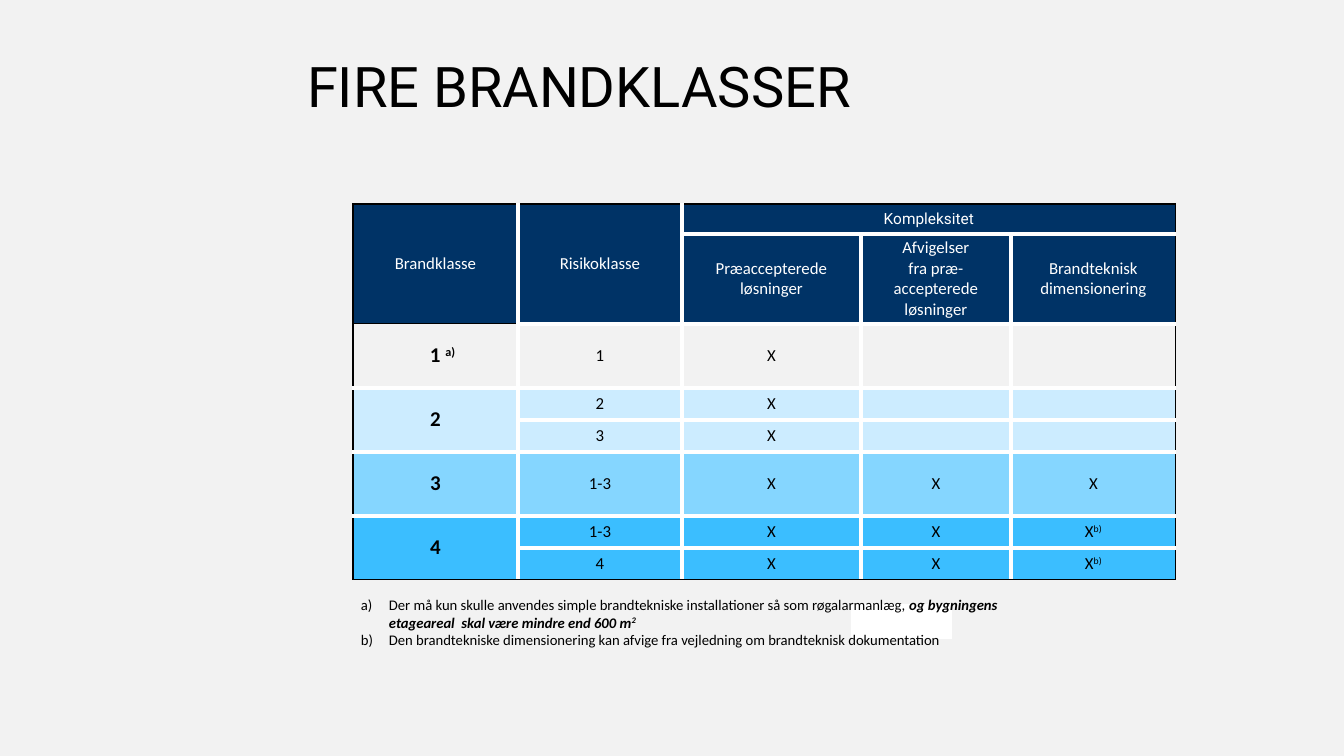
from lxml import etree
from pptx import Presentation
from pptx import util as u
from pptx.dml.color import RGBColor
from pptx.enum import shapes, text
from pptx.oxml.ns import qn

SCALE = 914400 / 100.8
WHITE, BLACK, NAVY, GREY = "FFFFFF", "000000", "003366", "F2F2F2"
COLS = [165, 164, 179, 150, 165]
ROWS = [30, 86, 64, 32, 32, 64, 32, 32]
FILLS = [NAVY, NAVY, GREY, "CCECFF", "CCECFF", "85D6FF", "3BBEFF", "3BBEFF"]
# Each raised mark follows a caret
CELLS = [
    ["Brandklasse", "Risikoklasse", "Kompleksitet", "", ""],
    ["", "", "Præaccepterede løsninger",
     "Afvigelser\nfra præ-accepterede løsninger", "Brandteknisk dimensionering"],
    ["1 ^a)", "1", "X", "", ""],
    ["2", "2", "X", "", ""],
    ["", "3", "X", "", ""],
    ["3", "1-3", "X", "X", "X"],
    ["4", "1-3", "X", "X", "X^b)"],
    ["", "4", "X", "X", "X^b)"],
]
MERGES = [(0, 0, 1, 0), (0, 1, 1, 1), (0, 2, 0, 4), (3, 0, 4, 0), (6, 0, 7, 0)]


def px(n):
    return u.Emu(round(n * SCALE))


def rgb(code):
    return RGBColor.from_string(code)


def write(para, words, size=12, font="Calibri", color=BLACK,
          bold=False, italic=False, raised=False):
    run = para.add_run()
    run.text = words
    face = run.font
    face.size, face.name = u.Pt(size), font
    face.bold, face.italic = bold, italic
    face.color.rgb = rgb(color)
    if raised:
        run._r.get_or_add_rPr().set("baseline", "30000")


def place(shape, left, top, width, height):
    shape.left, shape.top = px(left), px(top)
    shape.width, shape.height = px(width), px(height)


def inset(box, side, edge):
    box.margin_left = box.margin_right = px(side)
    box.margin_top = box.margin_bottom = px(edge)


def border(cell, sides):
    props = cell._tc.get_or_add_tcPr()
    for tag, dark in sides.items():
        line = etree.SubElement(props, qn("a:" + tag),
                                w=str(u.Pt(1 if dark else 3)))
        fill = etree.SubElement(line, qn("a:solidFill"))
        etree.SubElement(fill, qn("a:srgbClr"), val=BLACK if dark else WHITE)


def fill_cell(cell, row, col):
    # Thin dark outline and line below the first heading, white grid inside
    end_row = row + (cell.span_height if cell.is_merge_origin else 1)
    end_col = col + (cell.span_width if cell.is_merge_origin else 1)
    border(cell, {
        "lnL": col == 0,
        "lnR": end_col == len(COLS),
        "lnT": row == 0 or (row, col) == (2, 0),
        "lnB": end_row == len(ROWS) or (end_row, col) == (2, 0),
    })
    cell.fill.solid()
    cell.fill.fore_color.rgb = rgb(FILLS[row])
    cell.vertical_anchor = text.MSO_ANCHOR.MIDDLE
    inset(cell, 7, 4)

    head = row < 2
    key = col == 0 and not head
    words = CELLS[row][col]
    look = dict(size=15 if key else 12, bold=key, color=WHITE if head else BLACK)
    if words == "Kompleksitet":
        look.update(size=11, font="Roboto")
    if key and "^" in words:
        cell.margin_left = px(21)
    frame = cell.text_frame
    for i, part in enumerate(words.split("\n")):
        para = frame.add_paragraph() if i else frame.paragraphs[0]
        para.alignment = text.PP_ALIGN.CENTER
        if not part:
            etree.SubElement(para._p, qn("a:endParaRPr"), sz="1200")
            continue
        base, _, mark = part.partition("^")
        write(para, base, **look)
        if mark:
            write(para, mark, raised=True, **look)


def add_grid(slide):
    frame = slide.shapes.add_table(len(ROWS), len(COLS), px(353), px(204),
                                   px(sum(COLS)), px(sum(ROWS)))
    table = frame.table
    table.first_row = table.horz_banding = False
    for col, width in zip(table.columns, COLS):
        col.width = px(width)
    for row, height in zip(table.rows, ROWS):
        row.height = px(height)
    for top, left, low, right in MERGES:
        table.cell(top, left).merge(table.cell(low, right))
    for row in range(len(ROWS)):
        for col in range(len(COLS)):
            fill_cell(table.cell(row, col), row, col)


def add_title(slide):
    title = slide.shapes.title
    place(title, 307, 59, 869, 99)
    frame = title.text_frame
    inset(frame, 0, 0)
    frame.vertical_anchor = text.MSO_ANCHOR.TOP
    frame.auto_size = text.MSO_AUTO_SIZE.NONE
    para = frame.paragraphs[0]
    para.alignment = text.PP_ALIGN.LEFT
    para.line_spacing = 0.9
    write(para, "FIRE BRANDKLASSER", size=40, font="Roboto")


def add_notes(slide):
    body = slide.placeholders[1]
    place(body, 354, 592, 706, 114)
    frame = body.text_frame
    inset(frame, 7, 4)
    frame.word_wrap = True
    frame.auto_size = text.MSO_AUTO_SIZE.NONE
    frame.vertical_anchor = text.MSO_ANCHOR.TOP
    strong = dict(bold=True, italic=True)
    notes = [
        [("Der må kun skulle anvendes simple brandtekniske installationer "
          "så som røgalarmanlæg, ", {}),
         ("og bygningens etageareal  skal være mindre end 600 m", strong),
         ("2", dict(strong, raised=True))],
        [("Den brandtekniske dimensionering kan afvige fra vejledning om "
          "brandteknisk dokumentation", {})],
    ]
    for i, runs in enumerate(notes):
        para = frame.add_paragraph() if i else frame.paragraphs[0]
        props = para._p.get_or_add_pPr()
        props.set("marL", str(px(28)))
        props.set("indent", str(-px(28)))
        etree.SubElement(props, qn("a:buFont"), typeface="+mj-lt")
        etree.SubElement(props, qn("a:buAutoNum"), type="alphaLcParenR")
        para.space_before = u.Pt(0)
        for words, look in runs:
            write(para, words, size=10.5, **look)


def add_patch(slide):
    patch = slide.shapes.add_shape(shapes.MSO_SHAPE.RECTANGLE,
                                   px(851), px(604), px(101), px(35))
    patch.shadow.inherit = False
    patch.fill.solid()
    patch.fill.fore_color.rgb = rgb(WHITE)
    patch.line.fill.background()
    # Send behind the notes
    patch._element.getparent().insert(2, patch._element)


def main():
    deck = Presentation()
    deck.slide_width, deck.slide_height = px(1344), px(756)
    slide = deck.slides.add_slide(deck.slide_layouts[1])
    slide.background.fill.solid()
    slide.background.fill.fore_color.rgb = rgb(GREY)
    add_patch(slide)
    add_title(slide)
    add_grid(slide)
    add_notes(slide)
    deck.save("out.pptx")


if __name__ == "__main__":
    main()
